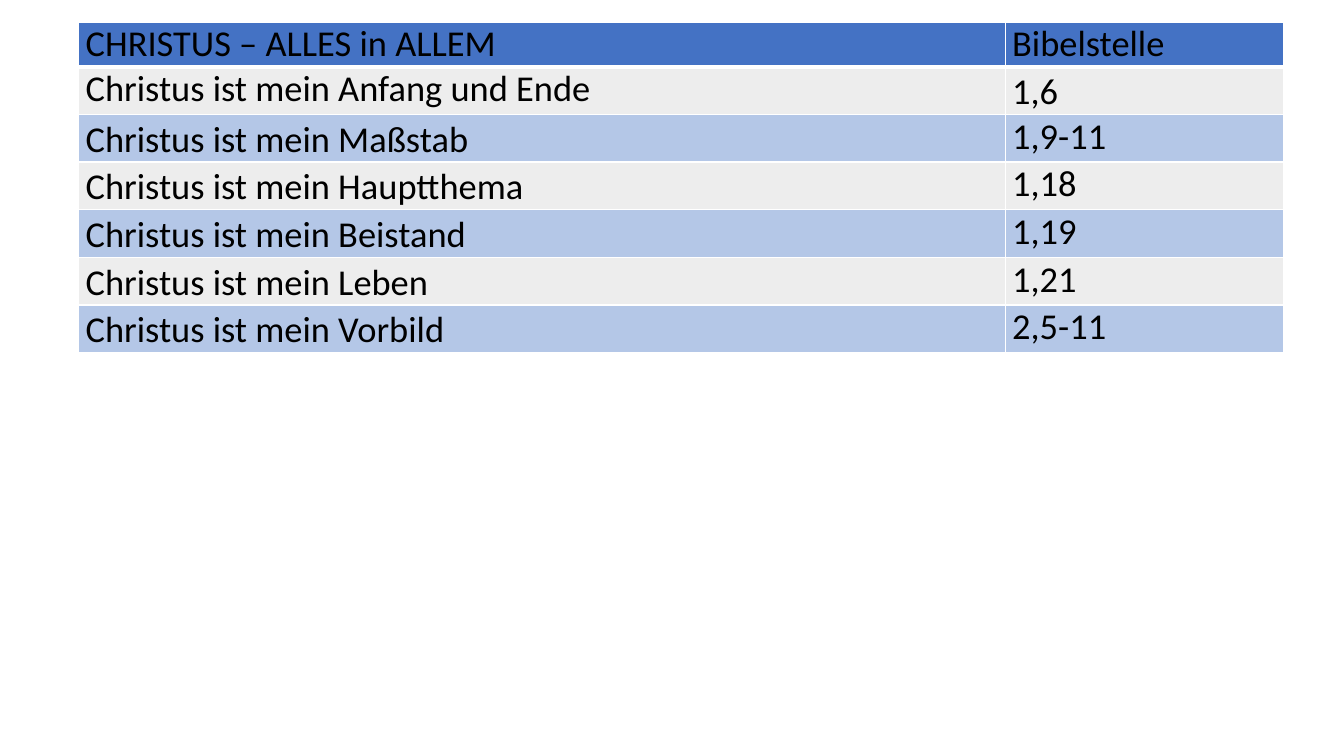
import pptx
import pptx.dml.color
import pptx.oxml
import pptx.oxml.ns
import pptx.util
from pptx.util import Inches

HEADER_FILL, ODD_FILL, EVEN_FILL = "4472C4", "EDEDED", "B4C7E7"
BORDER, INK = "FFFFFF", "000000"
LOOSE = 1.07

HEADINGS = ("CHRISTUS – ALLES in ALLEM", "Bibelstelle")
VERSES = (
    ("Christus ist mein Anfang und Ende", "1,6"),
    ("Christus ist mein Maßstab", "1,9-11"),
    ("Christus ist mein Hauptthema", "1,18"),
    ("Christus ist mein Beistand", "1,19"),
    ("Christus ist mein Leben", "1,21"),
    ("Christus ist mein Vorbild", "2,5-11"),
)
COLUMN_WIDTHS = (9.19, 2.76)
HEADER_HEIGHT, ROW_HEIGHT = 0.41, 0.42


def color(value):
    return pptx.dml.color.RGBColor.from_string(value)


def set_borders(cell, top=1, bottom=1):
    """Draw all four cell edges; widths are in points."""
    properties = cell._tc.get_or_add_tcPr()
    for side, width in (("L", 1), ("R", 1), ("T", top), ("B", bottom)):
        properties.append(pptx.oxml.parse_xml(
            f'<a:ln{side} {pptx.oxml.ns.nsdecls("a")} w="{pptx.util.Pt(width)}">'
            f'<a:solidFill><a:srgbClr val="{BORDER}"/></a:solidFill></a:ln{side}>'))


def fill_cell(cell, text, fill, spacing=None, top=1, bottom=1):
    set_borders(cell, top, bottom)
    cell.fill.solid()
    cell.fill.fore_color.rgb = color(fill)
    cell.margin_left = cell.margin_right = Inches(0.07)
    cell.margin_top = cell.margin_bottom = 0
    para = cell.text_frame.paragraphs[0]
    if spacing:
        para.line_spacing = spacing
    span = para.add_run()
    span.text = text
    span.font.name = "Calibri"
    span.font.size = pptx.util.Pt(26)
    span.font.bold = False
    span.font.color.rgb = color(INK)


def add_verse_table(page):
    height = HEADER_HEIGHT + ROW_HEIGHT * len(VERSES)
    table = page.shapes.add_table(
        len(VERSES) + 1, len(HEADINGS), Inches(0.78), Inches(0.22),
        Inches(sum(COLUMN_WIDTHS)), Inches(height)).table
    for column, width in zip(table.columns, COLUMN_WIDTHS):
        column.width = Inches(width)
    table.rows[0].height = Inches(HEADER_HEIGHT)
    for index, heading in enumerate(HEADINGS):
        fill_cell(table.cell(0, index), heading, HEADER_FILL, bottom=3)

    for number, verse in enumerate(VERSES, start=1):
        table.rows[number].height = Inches(ROW_HEIGHT)
        fill = ODD_FILL if number % 2 else EVEN_FILL
        loose_column = 1 if number == 1 else 0
        for index, text in enumerate(verse):
            fill_cell(table.cell(number, index), text, fill,
                      spacing=LOOSE if index == loose_column else None,
                      top=3 if number == 1 else 1)


def main():
    deck = pptx.Presentation()
    deck.slide_width, deck.slide_height = Inches(13.33), Inches(7.5)
    page = deck.slides.add_slide(deck.slide_layouts[6])
    add_verse_table(page)
    deck.save("out.pptx")


if __name__ == "__main__":
    main()
